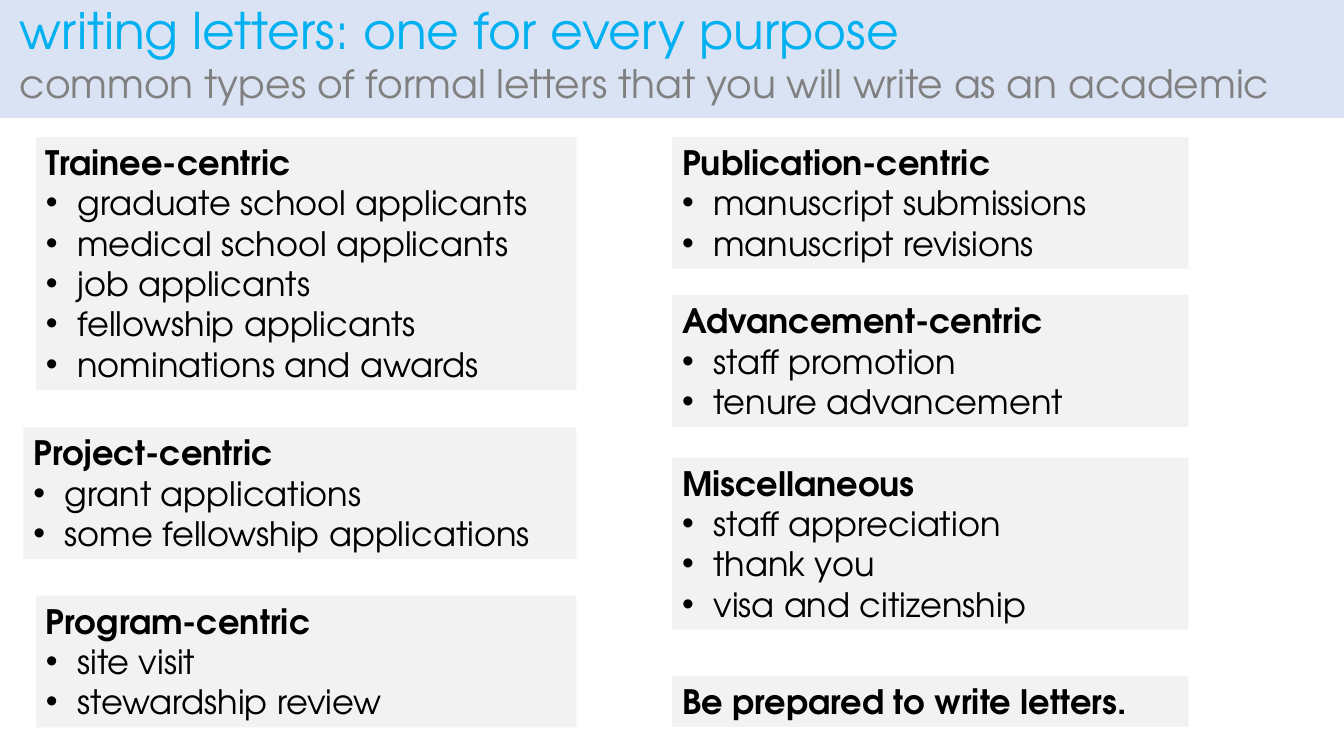
import lxml.etree
import pptx
import pptx.dml.color
import pptx.enum.shapes
import pptx.enum.text
import pptx.oxml.ns
import pptx.util

Cm = pptx.util.Cm
RGBColor = pptx.dml.color.RGBColor

FONT = "TeX Gyre Adventor"
BAND_BLUE = RGBColor(0xDA, 0xE3, 0xF3)
CARD_GREY = RGBColor(0xF2, 0xF2, 0xF2)
TITLE_BLUE = RGBColor(0x00, 0xB0, 0xF0)
SUBTITLE_GREY = RGBColor(0x80, 0x80, 0x80)
BLACK = RGBColor(0x00, 0x00, 0x00)

PAGE_WIDTH, PAGE_HEIGHT = 33.87, 19.05
LINE_HEIGHT, CARD_PADDING = 1.02, 0.26
BULLET_INDENT = 0.79
LEFT_EDGE, LEFT_END = 0.91, 14.53
RIGHT_EDGE, RIGHT_END = 16.94, 29.95

CARDS = [
    (LEFT_EDGE, LEFT_END, 3.45, "Trainee-centric",
     ["graduate school applicants", "medical school applicants", "job applicants",
      "fellowship applicants", "nominations and awards"]),
    (0.59, LEFT_END, 10.77, "Project-centric",
     ["grant applications", "some fellowship applications"]),
    (LEFT_EDGE, LEFT_END, 15.01, "Program-centric",
     ["site visit", "stewardship review"]),
    (RIGHT_EDGE, RIGHT_END, 3.45, "Publication-centric",
     ["manuscript submissions", "manuscript revisions"]),
    (RIGHT_EDGE, RIGHT_END, 7.44, "Advancement-centric",
     ["staff promotion", "tenure advancement"]),
    (RIGHT_EDGE, RIGHT_END, 11.53, "Miscellaneous",
     ["staff appreciation", "thank you", "visa and citizenship"]),
    (RIGHT_EDGE, RIGHT_END, 17.04, "Be prepared to write letters.", []),
]


class LetterPage:
    """Hold the current slide and draw its elements in one style."""

    def __init__(self, deck):
        """Add a title-only slide to the deck."""
        self.page = deck.slides.add_slide(deck.slide_layouts[5])

    def box(self, left, top, width, height, color):
        """Add a plain filled rectangle."""
        box = self.page.shapes.add_shape(
            pptx.enum.shapes.MSO_SHAPE.RECTANGLE,
            Cm(left), Cm(top), Cm(width), Cm(height))
        box.shadow.inherit = False
        box.fill.solid()
        box.fill.fore_color.rgb = color
        box.line.fill.background()
        return box

    def fill_text(self, frame, lines):
        """Fill a text frame with (text, size, color, bold, bulleted) lines."""
        frame.word_wrap = True
        frame.auto_size = pptx.enum.text.MSO_AUTO_SIZE.NONE
        frame.vertical_anchor = pptx.enum.text.MSO_ANCHOR.TOP
        for number, (text, size, color, bold, bulleted) in enumerate(lines):
            para = frame.add_paragraph() if number else frame.paragraphs[0]
            para.alignment = pptx.enum.text.PP_ALIGN.LEFT
            span = para.add_run()
            span.text = text
            span.font.name = FONT
            span.font.size = pptx.util.Pt(size)
            span.font.bold = bold
            span.font.color.rgb = color
            if bulleted:
                self.bullet(para)

    def bullet(self, para):
        """Give a paragraph a hanging round bullet."""
        settings = para._p.get_or_add_pPr()
        settings.set("marL", str(Cm(BULLET_INDENT)))
        settings.set("indent", str(-Cm(BULLET_INDENT)))
        name = pptx.oxml.ns.qn
        lxml.etree.SubElement(settings, name("a:buFont"), typeface="Arial")
        lxml.etree.SubElement(settings, name("a:buChar"), char="•")

    def heading(self, title, subtitle):
        """Place the title and subtitle on a full-width band."""
        holder = self.page.shapes.title
        band = self.box(0, 0, PAGE_WIDTH, 2.97, BAND_BLUE)
        holder._element.addprevious(band._element)
        holder.left, holder.top = Cm(0.25), Cm(-0.15)
        holder.width, holder.height = Cm(32.59), Cm(3)
        self.fill_text(holder.text_frame, [
            (title, 36, TITLE_BLUE, False, False),
            (subtitle, 28, SUBTITLE_GREY, False, False)])

    def card(self, left, right, top, heading, items):
        """Add a grey card sized to its heading and bulleted items."""
        height = LINE_HEIGHT * (1 + len(items)) + CARD_PADDING
        card = self.box(left, top, right - left, height, CARD_GREY)
        lines = [(heading, 24, BLACK, True, False)]
        lines += [(item, 24, BLACK, False, True) for item in items]
        self.fill_text(card.text_frame, lines)


def main():
    """Build the slide and save it."""
    deck = pptx.Presentation()
    deck.slide_width, deck.slide_height = Cm(PAGE_WIDTH), Cm(PAGE_HEIGHT)
    letters = LetterPage(deck)
    letters.heading("writing letters: one for every purpose",
                    "common types of formal letters that you will write as an academic")
    for card in CARDS:
        letters.card(*card)
    deck.save("out.pptx")


if __name__ == "__main__":
    main()
